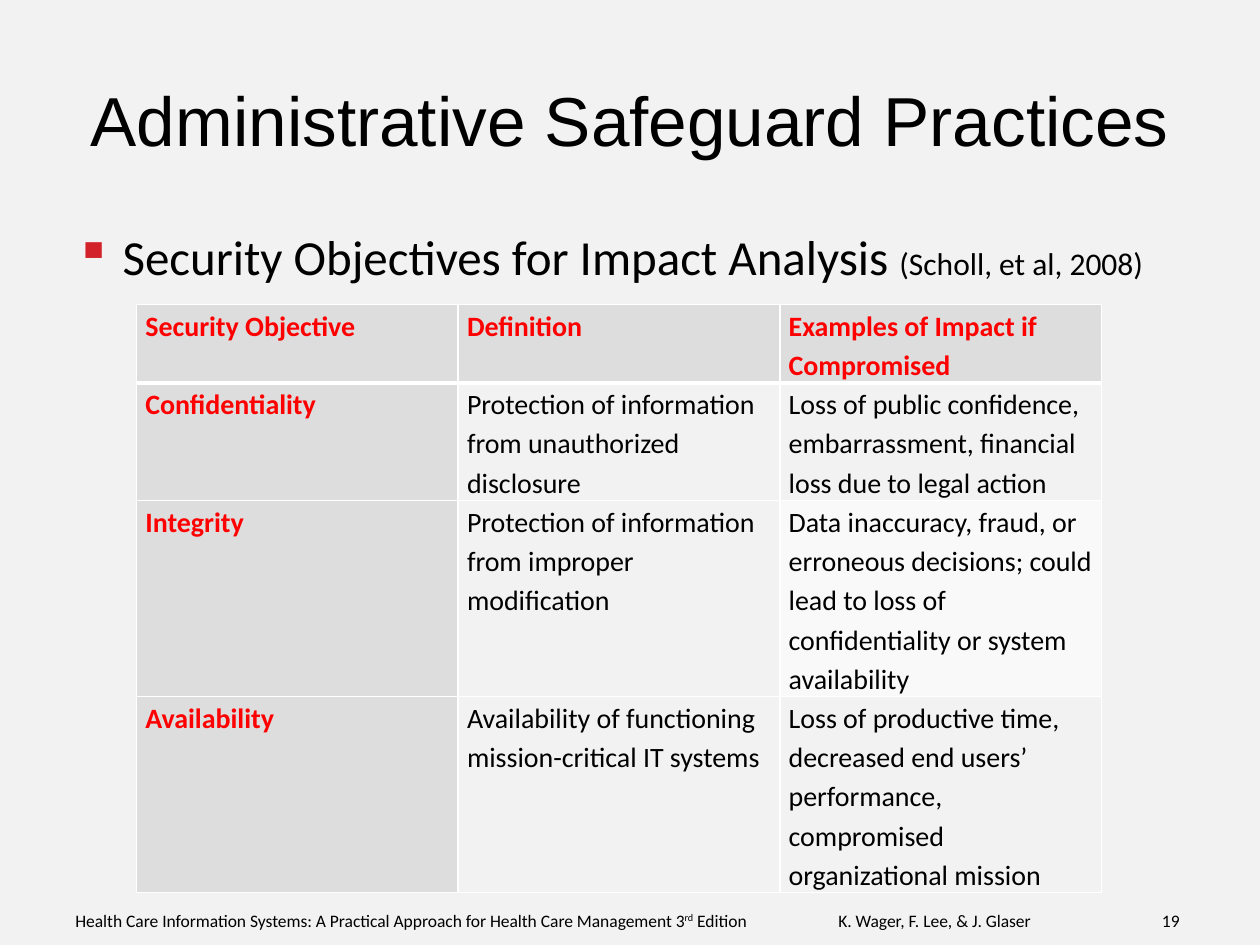
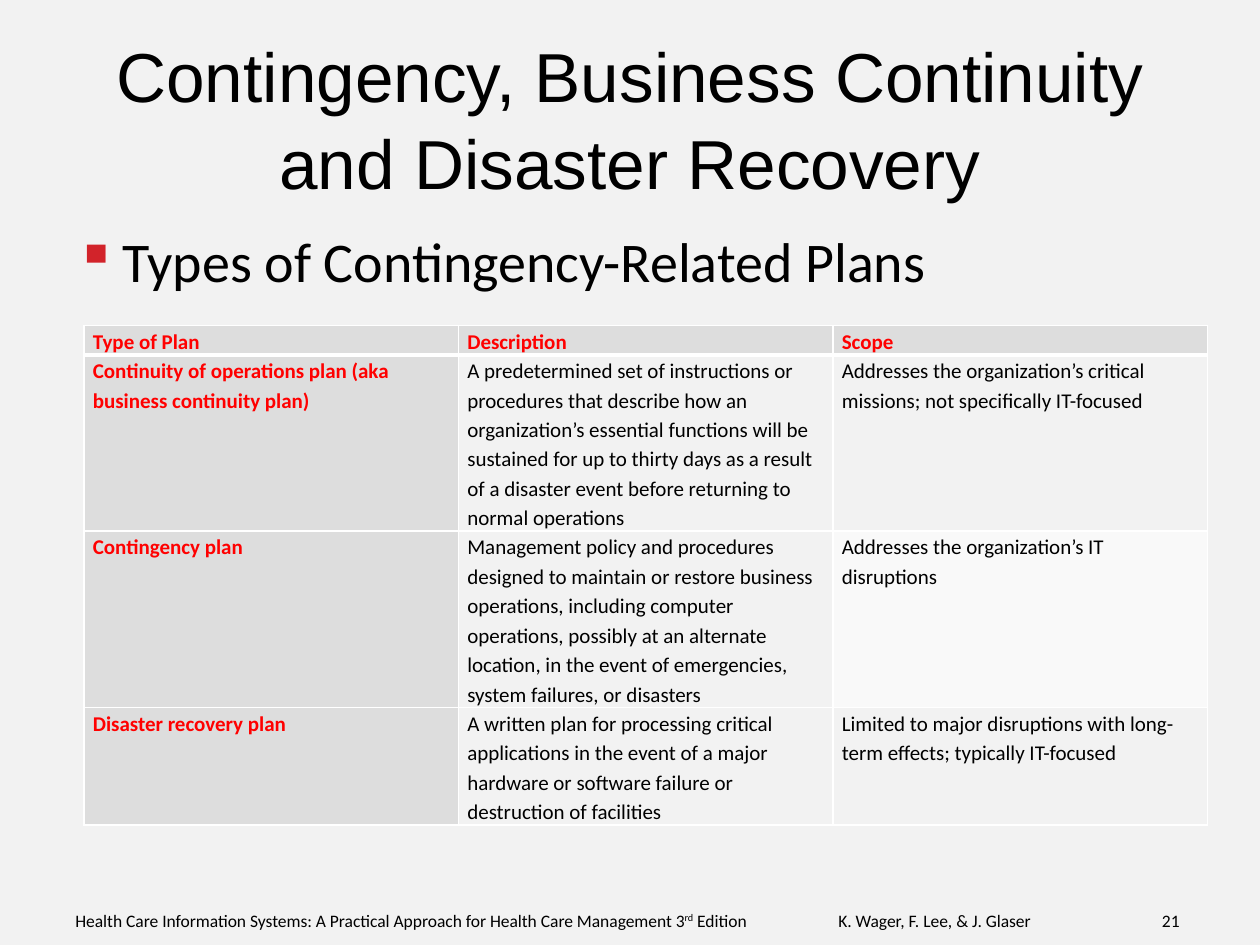
from lxml import etree
from pptx import Presentation
from pptx.dml.color import RGBColor
from pptx.enum.text import MSO_ANCHOR, MSO_AUTO_SIZE, PP_ALIGN
from pptx.oxml.ns import qn
from pptx.util import Pt

CENTER = PP_ALIGN.CENTER
MIDDLE = MSO_ANCHOR.MIDDLE
NO_FIT = MSO_AUTO_SIZE.NONE
TITLE_ONLY = 5

BLACK, WHITE, RED = "000000", "FFFFFF", "FF0000"
BACKGROUND, LABEL_FILL, LIGHT_FILL = "F2F2F2", "DDDDDD", "F9F9F9"
BULLET_RED = "D2232A"
TITLE_FONT, BODY_FONT = "Arial", "Calibri"
LEFT, WIDTH = 36, 648
INDENT = 27
LINE_SPACING = 1.15

OBJECTIVES = [
    ["Security Objective", "Definition", "Examples of Impact if Compromised"],
    ["Confidentiality",
     "Protection of information from unauthorized disclosure",
     "Loss of public confidence, embarrassment, financial loss due to legal action"],
    ["Integrity",
     "Protection of information from improper modification",
     "Data inaccuracy, fraud, or erroneous decisions; could lead to loss of "
     "confidentiality or system availability"],
    ["Availability",
     "Availability of functioning mission-critical IT systems",
     "Loss of productive time, decreased end users’ performance, compromised "
     "organizational mission"],
]

PLANS = [
    ["Type of Plan", "Description", "Scope"],
    ["Continuity of operations plan (aka business continuity plan)",
     "A predetermined set of instructions or procedures that describe how an "
     "organization’s essential functions will be sustained for up to thirty days "
     "as a result of a disaster event before returning to normal operations",
     "Addresses the organization’s critical missions; not specifically IT-focused"],
    ["Contingency plan",
     "Management policy and procedures designed to maintain or restore business "
     "operations, including computer operations, possibly at an alternate location, "
     "in the event of emergencies, system failures, or disasters",
     "Addresses the organization’s IT disruptions"],
    ["Disaster recovery plan",
     "A written plan for processing critical applications in the event of a major "
     "hardware or software failure or destruction of facilities",
     "Limited to major disruptions with long-term effects; typically IT-focused"],
]


def color(value):
    return RGBColor.from_string(value)


def add_span(para, text, size, ink=BLACK, font=BODY_FONT, bold=False):
    span = para.add_run()
    span.text = text
    span.font.name = font
    span.font.size = Pt(size)
    span.font.bold = bold
    span.font.color.rgb = color(ink)
    return span


def place(shape, left, top, width, height):
    shape.left, shape.top = Pt(left), Pt(top)
    shape.width, shape.height = Pt(width), Pt(height)


def add_page(deck, title):
    page = deck.slides.add_slide(deck.slide_layouts[TITLE_ONLY])
    box = page.shapes.title
    place(box, LEFT, 21.6, WIDTH, 90)
    box.text_frame.auto_size = NO_FIT
    box.text_frame.vertical_anchor = MIDDLE
    para = box.text_frame.paragraphs[0]
    para.alignment = CENTER
    para.line_spacing = 1.05
    add_span(para, title, 39.6, font=TITLE_FONT)
    return page


def add_text_box(page, left, top, width, height):
    box = page.shapes.add_textbox(Pt(left), Pt(top), Pt(width), Pt(height))
    box.text_frame.word_wrap = True
    return box.text_frame.paragraphs[0]


def add_footer(page, number):
    para = add_text_box(page, LEFT, 516.2, 654, 22.3)
    tabs = etree.SubElement(para._p.get_or_add_pPr(), qn("a:tabLst"))
    for position, side in ((436, "l"), (631, "r")):
        etree.SubElement(tabs, qn("a:tab"), pos=str(Pt(position)), algn=side)
    add_span(para, "Health Care Information Systems: A Practical Approach "
                   "for Health Care Management 3", 10)
    ordinal = add_span(para, "rd", 10)
    ordinal._r.get_or_add_rPr().set("baseline", "30000")
    add_span(para, f" Edition\tK. Wager, F. Lee, & J. Glaser\t{number}", 10)


def add_bullet(page, *spans):
    para = add_text_box(page, LEFT, 126, WIDTH, 46)
    properties = para._p.get_or_add_pPr()
    properties.set("marL", str(Pt(INDENT)))
    properties.set("indent", str(Pt(-INDENT)))
    ink = etree.SubElement(properties, qn("a:buClr"))
    etree.SubElement(ink, qn("a:srgbClr"), val=BULLET_RED)
    etree.SubElement(properties, qn("a:buChar"), char="▪")
    for text, size in spans:
        add_span(para, text, size)


def add_borders(cell, top, bottom):
    properties = cell._tc.get_or_add_tcPr()
    for side, weight in (("L", 1), ("R", 1), ("T", top), ("B", bottom)):
        line = etree.SubElement(properties, qn(f"a:ln{side}"), w=str(Pt(weight)))
        fill = etree.SubElement(line, qn("a:solidFill"))
        etree.SubElement(fill, qn("a:srgbClr"), val=WHITE)


def fill_cell(cell, text, row, column, size):
    is_label = row == 0 or column == 0
    add_borders(cell, 3 if row == 1 else 1, 3 if row == 0 else 1)
    shade = LIGHT_FILL if (row, column) == (2, 2) else BACKGROUND
    cell.fill.solid()
    cell.fill.fore_color.rgb = color(LABEL_FILL if is_label else shade)
    cell.margin_left = cell.margin_right = Pt(5.1)
    cell.margin_top = cell.margin_bottom = 0
    para = cell.text_frame.paragraphs[0]
    para.line_spacing = LINE_SPACING
    if row:
        para.space_after = Pt(3)
    add_span(para, text, size, RED if is_label else BLACK, bold=is_label)


def add_grid(page, rows, left, top, column_width, size, line_counts):
    heights = [Pt(size * 1.4 * count) for count in line_counts]
    columns = len(rows[0])
    frame = page.shapes.add_table(len(rows), columns, Pt(left), Pt(top),
                                  Pt(column_width * columns), sum(heights))
    table = frame.table
    for column in table.columns:
        column.width = Pt(column_width)
    for row, texts in enumerate(rows):
        table.rows[row].height = heights[row]
        for column, text in enumerate(texts):
            fill_cell(table.cell(row, column), text, row, column, size)


def main():
    deck = Presentation()
    deck.slide_width, deck.slide_height = Pt(720), Pt(540)
    backdrop = deck.slide_master.background.fill
    backdrop.solid()
    backdrop.fore_color.rgb = color(BACKGROUND)

    page = add_page(deck, "Administrative Safeguard Practices")
    add_footer(page, 19)
    add_bullet(page, ("Security Objectives for Impact Analysis ", 28),
               ("(Scholl, et al, 2008)", 18))
    add_grid(page, OBJECTIVES, 78, 174, 183.8, 16, (2, 3, 5, 5))

    page = add_page(deck, "Contingency, Business Continuity and Disaster Recovery")
    add_footer(page, 21)
    add_bullet(page, ("Types of Contingency-Related Plans", 32))
    add_grid(page, PLANS, 48, 186, 214, 12, (1, 6, 6, 4))

    deck.save("out.pptx")


if __name__ == "__main__":
    main()
